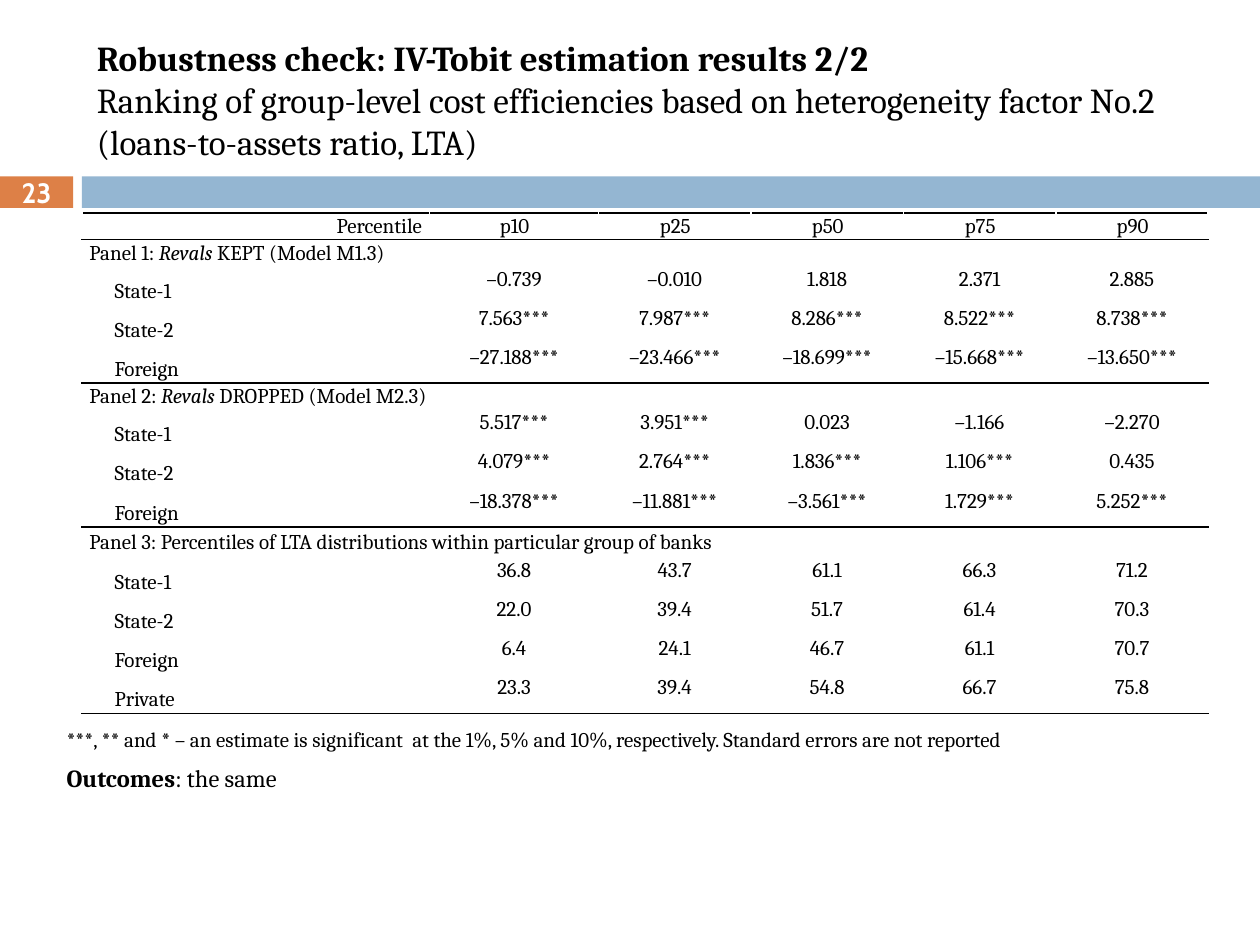
from dataclasses import dataclass
from typing import Optional

from lxml.etree import SubElement
from pptx import Presentation
from pptx.dml.color import RGBColor
from pptx.enum.shapes import MSO_SHAPE as Shape
from pptx.enum.text import MSO_ANCHOR as Anchor, PP_ALIGN as Align
from pptx.oxml.ns import qn
from pptx.util import Inches, Pt

GRID_COLUMNS, GRID_ROWS = 100, 75
CELL = Inches(0.1)
BLACK, WHITE, ORANGE, BLUE = "000000", "FFFFFF", "DD8047", "94B6D2"
COLUMN_WIDTHS = [27.6, 13.4] + [12.1] * 4
HEADER = ["Percentile", "p10", "p25", "p50", "p75", "p90"]


@dataclass(frozen=True)
class Box:
    """A place on the slide in grid columns and rows."""
    left: float
    top: float
    width: float
    height: float


@dataclass(frozen=True)
class Run:
    """A stretch of text in one style."""
    text: str
    size: float = 12
    bold: bool = False
    italic: bool = False
    font: str = "Cambria"
    color: str = BLACK


@dataclass(frozen=True)
class Panel:
    """A heading over rows of label and percentile values."""
    heading: list[Run]
    height: float
    rows: list[str]


@dataclass(frozen=True)
class CellStyle:
    """Alignment, first-line indent, spacing, insets and rules of a table cell."""
    align: Align
    indent: float = 0
    spacing: Optional[float] = None
    anchor: Anchor = Anchor.TOP
    insets: tuple[float, ...] = (0.6, 0.1, 0.6, 0)
    top: str = WHITE
    bottom: str = WHITE


PANELS = [
    Panel([Run("Panel 1: "), Run("Revals ", italic=True), Run("KEPT (Model M1.3)")], 2, [
        "State-1 –0.739 –0.010 1.818 2.371 2.885",
        "State-2 7.563*** 7.987*** 8.286*** 8.522*** 8.738***",
        "Foreign –27.188*** –23.466*** –18.699*** –15.668*** –13.650***"]),
    Panel([Run("Panel 2: "), Run("Revals ", italic=True), Run("DROPPED (Model M2.3)")], 2, [
        "State-1 5.517*** 3.951*** 0.023 –1.166 –2.270",
        "State-2 4.079*** 2.764*** 1.836*** 1.106*** 0.435",
        "Foreign –18.378*** –11.881*** –3.561*** 1.729*** 5.252***"]),
    Panel([Run("Panel 3: Percentiles of LTA distributions within particular group of banks")], 2.4, [
        "State-1 36.8 43.7 61.1 66.3 71.2",
        "State-2 22.0 39.4 51.7 61.4 70.3",
        "Foreign 6.4 24.1 46.7 61.1 70.7",
        "Private 23.3 39.4 54.8 66.7 75.8"]),
]


def units(count: float) -> int:
    """Turn grid cells into a length."""
    return round(count * CELL)


def place(box: Box) -> list[int]:
    """Turn a box into left, top, width and height."""
    return [units(value) for value in (box.left, box.top, box.width, box.height)]


def paint(fill, color: str) -> None:
    """Give a fill one solid colour."""
    fill.solid()
    fill.fore_color.rgb = RGBColor.from_string(color)


def add_runs(paragraph, runs: list[Run]) -> None:
    """Write styled runs into a paragraph, breaking lines at newlines."""
    for item in runs:
        run = paragraph.add_run()
        run.text = item.text.rstrip("\n")
        font = run.font
        font.name, font.size = item.font, Pt(item.size)
        font.bold, font.italic = item.bold, item.italic
        font.color.rgb = RGBColor.from_string(item.color)
        if item.text.endswith("\n"):
            paragraph.add_line_break()


def add_bar(slide, box: Box, color: str) -> None:
    """Draw a plain filled rectangle."""
    shape = slide.shapes.add_shape(Shape.RECTANGLE, *place(box))
    shape.shadow.inherit = False
    paint(shape.fill, color)
    shape.line.fill.background()


def add_text(slide, box: Box, paragraphs: list[list[Run]], anchor: Anchor = Anchor.TOP,
             align: Align = Align.LEFT, after: float = 0) -> None:
    """Add a wrapped text box."""
    frame = slide.shapes.add_textbox(*place(box)).text_frame
    frame.word_wrap = True
    frame.vertical_anchor = anchor
    for index, runs in enumerate(paragraphs):
        paragraph = frame.add_paragraph() if index else frame.paragraphs[0]
        paragraph.alignment = align
        paragraph.space_after = Pt(after)
        add_runs(paragraph, runs)


def style_cell(cell, style: CellStyle) -> None:
    """Set the borders, fill, insets and anchor of a cell."""
    properties = cell._tc.get_or_add_tcPr()
    for side, color in zip("LRTB", (WHITE, WHITE, style.top, style.bottom)):
        line = SubElement(properties, qn(f"a:ln{side}"), w=str(Pt(1)))
        SubElement(SubElement(line, qn("a:solidFill")), qn("a:srgbClr"), val=color)
    paint(cell.fill, WHITE)
    (cell.margin_left, cell.margin_top, cell.margin_right,
     cell.margin_bottom) = map(units, style.insets)
    cell.vertical_anchor = style.anchor


def write_cell(cell, runs: list[Run], style: CellStyle) -> None:
    """Style a cell and write its paragraph."""
    style_cell(cell, style)
    paragraph = cell.text_frame.paragraphs[0]
    paragraph.alignment = style.align
    if style.spacing:
        paragraph.line_spacing = style.spacing
    if style.indent:
        paragraph._p.get_or_add_pPr().set("indent", str(units(style.indent)))
    add_runs(paragraph, runs)


def write_row(table, row: int, texts: list[str], label: CellStyle, value: CellStyle) -> None:
    """Write a label cell followed by value cells."""
    for column, text in enumerate(texts):
        write_cell(table.cell(row, column), [Run(text)], value if column else label)


def add_results(slide, box: Box) -> None:
    """Build the table of percentiles by panel."""
    count = 1 + sum(1 + len(panel.rows) for panel in PANELS)
    table = slide.shapes.add_table(count, len(HEADER), *place(box)).table
    table.first_row = table.horz_banding = False
    for column, width in zip(table.columns, COLUMN_WIDTHS):
        column.width = units(width)
    for row in table.rows:
        row.height = units(3)
    table.rows[0].height = units(2)
    write_row(table, 0, HEADER,
              CellStyle(Align.RIGHT, 4.9, anchor=Anchor.MIDDLE, top=BLACK, bottom=BLACK),
              CellStyle(Align.CENTER, 0.1, anchor=Anchor.MIDDLE, insets=(0, 0, 0, 0),
                        top=BLACK, bottom=BLACK))
    heading = CellStyle(Align.JUSTIFY, anchor=Anchor.MIDDLE, top=BLACK)
    row = 1
    for panel in PANELS:
        table.rows[row].height = units(panel.height)
        table.cell(row, 0).merge(table.cell(row, len(HEADER) - 1))
        write_cell(table.cell(row, 0), panel.heading, heading)
        for column in range(1, len(HEADER)):
            style_cell(table.cell(row, column), heading)
        for position, line in enumerate(panel.rows, 1):
            rule = BLACK if position == len(panel.rows) else WHITE
            write_row(table, row + position, line.split(),
                      CellStyle(Align.LEFT, 2, 1.5, bottom=rule),
                      CellStyle(Align.CENTER, bottom=rule))
        row += 1 + len(panel.rows)


def main() -> None:
    """Build and save the slide."""
    presentation = Presentation()
    presentation.slide_width = units(GRID_COLUMNS)
    presentation.slide_height = units(GRID_ROWS)
    slide = presentation.slides.add_slide(presentation.slide_layouts[6])
    add_bar(slide, Box(0, 14, 5.8, 2.5), ORANGE)
    add_bar(slide, Box(6.5, 14, 93.5, 2.5), BLUE)
    add_text(slide, Box(6.7, 2.5, 93.3, 10.8), [[
        Run("Robustness check: IV-Tobit estimation results 2/2\n", 20, bold=True),
        Run("Ranking of group-level cost efficiencies based on heterogeneity factor No.2 "
            "(loans-to-assets ratio, LTA)", 20)]], Anchor.MIDDLE)
    add_text(slide, Box(0, 13.9, 5.8, 2.7), [[Run("23", 16, True, font="Cabin", color=WHITE)]],
             Anchor.MIDDLE, Align.CENTER)
    add_text(slide, Box(4.3, 57.2, 93.7, 11), [
        [Run("***, ** and * – an estimate is significant  at the 1%, 5% and 10%, respectively. "
             "Standard errors are not reported")],
        [Run("Outcomes", 14, bold=True), Run(": the same", 14)]], after=6)
    add_results(slide, Box(6.5, 16.9, 89.2, 38.4))
    presentation.save("out.pptx")


if __name__ == "__main__":
    main()
